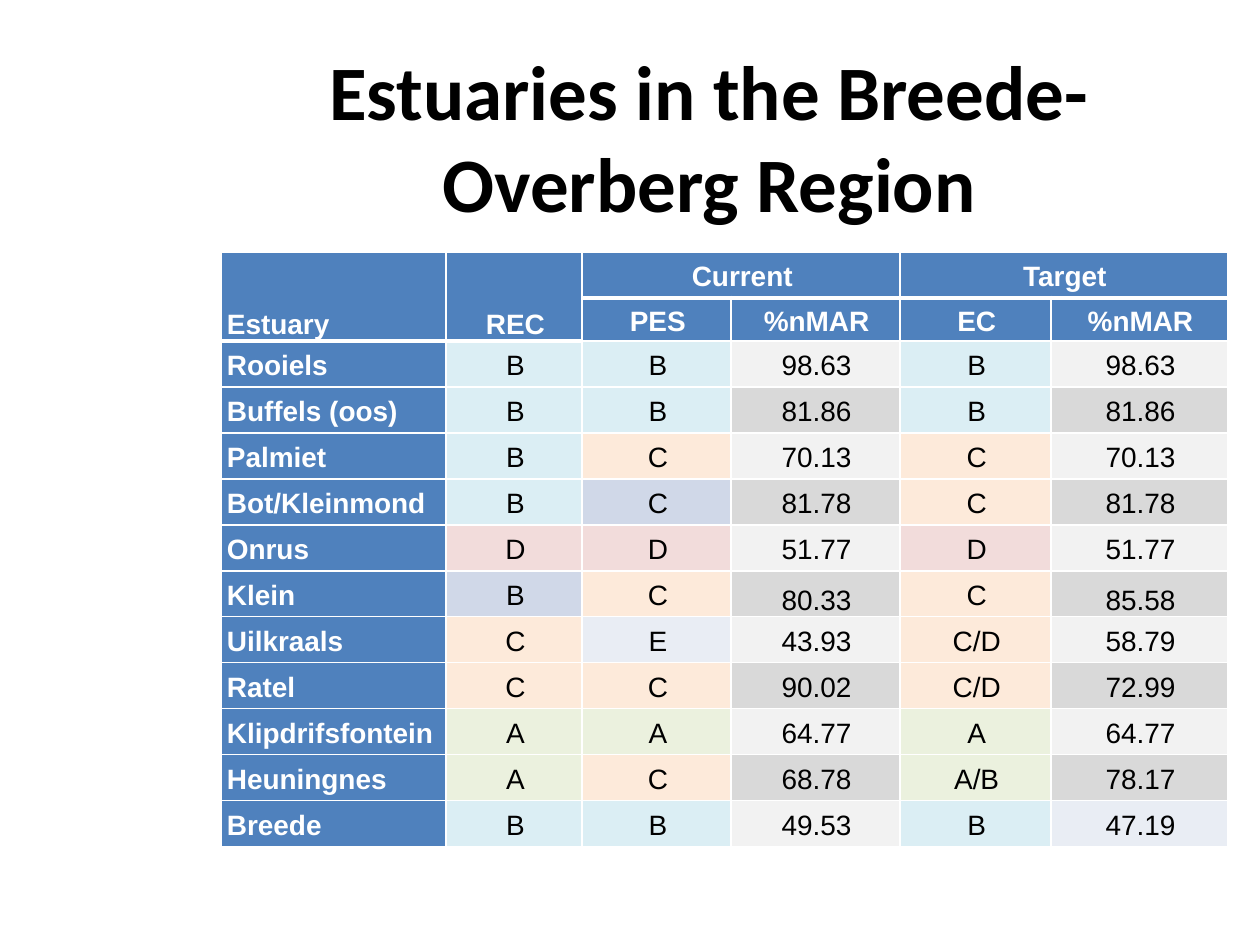
from dataclasses import dataclass

from lxml.etree import SubElement
from pptx import Presentation
from pptx.dml.color import RGBColor
from pptx.enum.text import MSO_ANCHOR, PP_ALIGN
from pptx.oxml.ns import qn
from pptx.table import Table, _Cell
from pptx.text.text import Font, _Paragraph
from pptx.util import Pt

BLUE, WHITE, BLACK = "4F81BD", "FFFFFF", "000000"
PALE, MID = "E9EDF4", "D0D8E8"
GRADES = {"A": "EBF1DE", "B": "DBEEF4", "C": "FDEADA", "D": "F2DCDB", "E": PALE}
GREYS = ("F2F2F2", "D9D9D9")
WIDTHS = (128.2, 77.8, 85, 96.5, 86.4, 100.8)
HEAD, SUB, ROW = 26.3, 24.5, 26.3
THIN, THICK = 1, 3


@dataclass
class Label:
    row: int
    col: int
    text: str
    rows: int = 1
    cols: int = 1


@dataclass
class Estuary:
    name: str
    rec: str
    pes: str
    now: str
    goal: str
    aim: str


LABELS = [
    Label(0, 0, "Estuary", rows=2),
    Label(0, 1, "REC", rows=2),
    Label(0, 2, "Current", cols=2),
    Label(0, 4, "Target", cols=2),
    Label(1, 2, "PES"),
    Label(1, 3, "%nMAR"),
    Label(1, 4, "EC"),
    Label(1, 5, "%nMAR"),
]

DATA = [
    Estuary("Rooiels", "B", "B", "98.63", "B", "98.63"),
    Estuary("Buffels (oos)", "B", "B", "81.86", "B", "81.86"),
    Estuary("Palmiet", "B", "C", "70.13", "C", "70.13"),
    Estuary("Bot/Kleinmond", "B", "C", "81.78", "C", "81.78"),
    Estuary("Onrus", "D", "D", "51.77", "D", "51.77"),
    Estuary("Klein", "B", "C", "80.33", "C", "85.58"),
    Estuary("Uilkraals", "C", "E", "43.93", "C/D", "58.79"),
    Estuary("Ratel", "C", "C", "90.02", "C/D", "72.99"),
    Estuary("Klipdrifsfontein", "A", "A", "64.77", "A", "64.77"),
    Estuary("Heuningnes", "A", "C", "68.78", "A/B", "78.17"),
    Estuary("Breede", "B", "B", "49.53", "B", "47.19"),
]

# Cells that break the colour rule, by estuary and column
ODD = {("Bot/Kleinmond", 2): MID, ("Klein", 1): MID, ("Breede", 5): PALE}


def color(code: str) -> RGBColor:
    return RGBColor.from_string(code)


def style(font: Font, face: str, size: float, code: str, bold: bool) -> None:
    font.name, font.size, font.bold = face, Pt(size), bold
    font.color.rgb = color(code)


def write(para: _Paragraph, text: str, face: str, size: float, code: str,
          bold: bool) -> None:
    run = para.add_run()
    run.text = text
    style(run.font, face, size, code, bold)


def edge(cell: _Cell, row: int, col: int) -> None:
    """White borders, thick below the top header cells."""
    top = THICK if row == 1 or (row == 2 and col < 2) else THIN
    low = THICK if row == 0 or (row == 1 and col < 2) else THIN
    props = cell._tc.get_or_add_tcPr()
    sides = (("lnL", THIN), ("lnR", THIN), ("lnT", top), ("lnB", low))
    for tag, width in sides:
        line = SubElement(props, qn(f"a:{tag}"), w=str(Pt(width)))
        fill = SubElement(line, qn("a:solidFill"))
        SubElement(fill, qn("a:srgbClr"), val=WHITE)


def paint(cell: _Cell, code: str) -> None:
    cell.fill.solid()
    cell.fill.fore_color.rgb = color(code)


def fill_cell(cell: _Cell, text: str, code: str, left: bool, low: bool) -> None:
    head = code == BLUE
    paint(cell, code)
    cell.margin_left, cell.margin_right = Pt(3), Pt(1.5)
    cell.margin_top = cell.margin_bottom = Pt(0)
    cell.vertical_anchor = MSO_ANCHOR.BOTTOM if low else MSO_ANCHOR.MIDDLE
    para = cell.text_frame.paragraphs[0]
    para.alignment = PP_ALIGN.LEFT if left else PP_ALIGN.CENTER
    para.line_spacing = 1.15
    write(para, text, "Arial", 16, WHITE if head else BLACK, head)


def shade(name: str, col: int, text: str, row: int) -> str:
    if col == 0:
        return BLUE
    rule = GREYS[row % 2] if col in (3, 5) else GRADES[text[0]]
    return ODD.get((name, col), rule)


def draw_head(grid: Table) -> None:
    for lab in LABELS:
        cell = grid.cell(lab.row, lab.col)
        if lab.rows > 1 or lab.cols > 1:
            cell.merge(grid.cell(lab.row + lab.rows - 1, lab.col + lab.cols - 1))
        fill_cell(cell, lab.text, BLUE, lab.col == 0, lab.rows > 1)


def draw_rows(grid: Table) -> None:
    for i, est in enumerate(DATA):
        vals = (est.name, est.rec, est.pes, est.now, est.goal, est.aim)
        for col, text in enumerate(vals):
            low = est.name == "Klein" and col in (3, 5)
            code = shade(est.name, col, text, i)
            fill_cell(grid.cell(i + 2, col), text, code, col == 0, low)


def main() -> None:
    deck = Presentation()
    deck.slide_width, deck.slide_height = Pt(720), Pt(540)
    slide = deck.slides.add_slide(deck.slide_layouts[5])

    # Title
    title = slide.shapes.title
    title.left, title.top = Pt(126.7), Pt(21.6)
    title.width, title.height = Pt(557.3), Pt(111.6)
    frame = title.text_frame
    frame.word_wrap = True
    frame.vertical_anchor = MSO_ANCHOR.MIDDLE
    para = frame.paragraphs[0]
    para.alignment = PP_ALIGN.CENTER
    write(para, "Estuaries in the Breede-Overberg Region", "Calibri", 44, BLACK, True)

    # Table grid
    highs = [HEAD, SUB] + [ROW] * len(DATA)
    grid = slide.shapes.add_table(
        len(highs), len(WIDTHS), Pt(126.7), Pt(144), Pt(sum(WIDTHS)), Pt(sum(highs))
    ).table
    for col, width in zip(grid.columns, WIDTHS):
        col.width = Pt(width)
    for row, high in zip(grid.rows, highs):
        row.height = Pt(high)

    # Borders come before fills in the cell properties
    for r in range(len(highs)):
        for c in range(len(WIDTHS)):
            edge(grid.cell(r, c), r, c)
            paint(grid.cell(r, c), BLUE)

    # Table content
    draw_head(grid)
    draw_rows(grid)
    deck.save("out.pptx")


if __name__ == "__main__":
    main()
